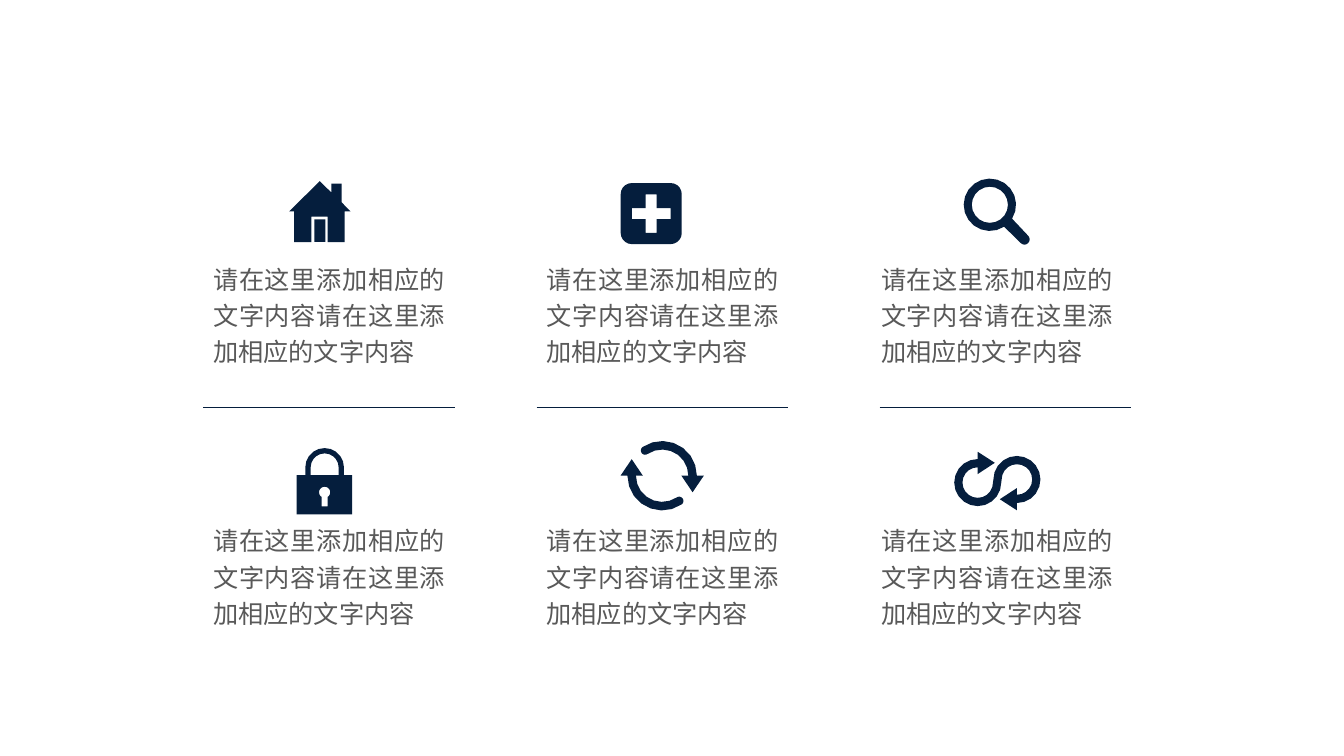
from math import cos, radians, sin

from pptx import Presentation
from pptx.dml.color import RGBColor
from pptx.enum.shapes import MSO_CONNECTOR as CONNECTOR, MSO_SHAPE as SHAPE
from pptx.enum.text import MSO_AUTO_SIZE as AUTO_SIZE, PP_ALIGN as ALIGN
from pptx.oxml.xmlchemy import OxmlElement
from pptx.util import Pt

NAVY = RGBColor(0x05, 0x1E, 0x3D)
GREY = RGBColor(0x59, 0x59, 0x59)

CAPTION = "请在这里添加相应的文字内容请在这里添加相应的文字内容"
CAPTION_LEFTS = (145.2, 383.3, 622.3)
CAPTION_TOPS = (180.7, 367.7)
DIVIDER_LEFTS = (145.2, 383.3, 628.4)
DIVIDER_TOP = 291
CAPTION_WIDTH = 180
DIVIDER_WIDTH = 179.6
CAPTION_HEIGHT = 85.7


def arc(x, y, radius, start, end):
    """Return points on an arc, with angles in degrees clockwise from the right."""
    steps = max(4, round(abs(end - start) / 18))
    angles = [radians(start + (end - start) * i / steps) for i in range(steps + 1)]
    return [(x + radius * cos(a), y + radius * sin(a)) for a in angles]


def half_turn(points):
    """Return the points turned by 180 degrees about the origin."""
    return [(-x, -y) for x, y in points]


def paint(icon):
    """Fill an icon part with navy, without outline or shadow."""
    icon.shadow.inherit = False
    icon.fill.solid()
    icon.fill.fore_color.rgb = NAVY
    icon.line.fill.background()


def add_outline(slide, left, top, *contours):
    """Draw closed contours, given relative to left and top, as one filled outline."""
    builder = None
    for contour in contours:
        start, *rest = [(Pt(x), Pt(y)) for x, y in contour]
        if builder is None:
            builder = slide.shapes.build_freeform(*start)
        else:
            builder.move_to(*start)
        builder.add_line_segments(rest, close=True)
    paint(builder.convert_to_shape(Pt(left), Pt(top)))


def add_text(slide, text, left, top, width, height, *, size, color, font="Arial",
             align=ALIGN.JUSTIFY, spacing=1.2):
    """Add a wrapped text box that grows with its text."""
    box = slide.shapes.add_textbox(Pt(left), Pt(top), Pt(width), Pt(height))
    frame = box.text_frame
    frame.word_wrap = True
    frame.auto_size = AUTO_SIZE.SHAPE_TO_FIT_TEXT
    paragraph = frame.paragraphs[0]
    paragraph.alignment = align
    paragraph.line_spacing = spacing
    run = paragraph.add_run()
    run.text = text
    run.font.name = font
    run.font.size = Pt(size)
    run.font.color.rgb = color


def add_divider(slide, left, top, width):
    """Add a thin horizontal line."""
    divider = slide.shapes.add_connector(
        CONNECTOR.STRAIGHT, Pt(left), Pt(top), Pt(left + width), Pt(top))
    divider.line.color.rgb = NAVY
    divider.line.width = Pt(0.75)
    divider._element.spPr.append(OxmlElement("a:effectLst"))


def add_house(slide, left, top):
    """Draw a house with a chimney and a door."""
    walls = [(37.4, 15.1), (37.4, 1.8), (30.2, 1.8), (30.2, 8.2), (21.8, 0),
             (0, 21.6), (3.6, 21.6), (3.6, 43.5), (15.8, 43.5), (15.8, 25.4),
             (27.4, 25.4), (27.4, 43.5), (39.6, 43.5), (39.6, 21.6), (43.8, 21.6)]
    add_outline(slide, left, top, walls)
    paint(slide.shapes.add_shape(
        SHAPE.RECTANGLE, Pt(left + 18), Pt(top + 27.4), Pt(7.9), Pt(16.1)))


def add_plus_tile(slide, left, top):
    """Draw a rounded tile with a plus cut out of it."""
    side, radius = 43.6, 7.9
    far = side - radius
    tile = [point for x, y, start in
            ((far, radius, -90), (far, far, 0), (radius, far, 90), (radius, radius, 180))
            for point in arc(x, y, radius, start, start + 90)]
    arm, inset, half = side / 2, 8, 3.9
    quarter = [(arm - inset, -half), (half, -half), (half, inset - arm)]
    turns = [quarter, [(y, -x) for x, y in quarter]]
    plus = [(arm + x, arm + y) for points in turns + [half_turn(p) for p in turns]
            for x, y in points]
    add_outline(slide, left, top, tile, plus)


def add_magnifier(slide, left, top):
    """Draw a magnifying glass."""
    rim = arc(18.7, 18.7, 18.7, 57, 392) + arc(43.4, 43.4, 3.7, -45, 135)
    lens = arc(18.7, 18.7, 12.9, 360, 0)
    add_outline(slide, left, top, rim, lens)


def add_padlock(slide, left, top):
    """Draw a padlock with a keyhole."""
    body = [(0, 47.8), (0, 19.8), (6.2, 19.8), *arc(20, 14.2, 13.8, 180, 360),
            (33.8, 19.8), (39.6, 19.8), (39.6, 47.8)]
    shackle = [(30, 19.8), *arc(20, 14.2, 10, 360, 180), (10, 19.8)]
    keyhole = [(17.9, 42), *arc(20, 32, 4, 122, 418), (22.1, 42)]
    add_outline(slide, left, top, body, shackle, keyhole)


def add_cycle(slide, x, y):
    """Draw two arrows that chase each other around a center."""
    outer, inner, end = 24.8, 18.7, 56
    middle, thickness = (outer + inner) / 2, outer - inner
    cap_x, cap_y = arc(0, 0, middle, end, end)[0]
    head = [(8 - middle, 0), (-middle, -11.8), (-8 - middle, 0)]
    rising = (arc(0, 0, inner, end, 180) + head + arc(0, 0, outer, 180, end)
              + arc(cap_x, cap_y, thickness / 2, end, end - 180))
    for arrow in (rising, half_turn(rising)):
        add_outline(slide, x, y, arrow)


def add_loop(slide, x, y):
    """Draw a sideways figure eight with two arrowheads."""
    head = [(-14, -5), (-1.8, -13), (-14, -20.9)]
    ring = arc(-14, 1.1, 10.9, 0, 270) + head + arc(-14, 1.1, 16.8, 270, 0)
    add_outline(slide, x, y, ring + half_turn(ring))


def main():
    """Build the slide and save it."""
    deck = Presentation()
    deck.slide_width, deck.slide_height = Pt(960), Pt(540)
    slide = deck.slides.add_slide(deck.slide_layouts[6])
    for top in CAPTION_TOPS:
        for left in CAPTION_LEFTS:
            add_text(slide, CAPTION, left, top, CAPTION_WIDTH, CAPTION_HEIGHT,
                     size=18, color=GREY)
    add_house(slide, 206.6, 129.4)
    add_plus_tile(slide, 443.4, 130.8)
    add_magnifier(slide, 688.4, 127.6)
    add_padlock(slide, 211.9, 319.7)
    add_cycle(slide, 473, 339.8)
    add_loop(slide, 712.4, 343.6)
    for left in DIVIDER_LEFTS:
        add_divider(slide, left, DIVIDER_TOP, DIVIDER_WIDTH)
    deck.save("out.pptx")


if __name__ == "__main__":
    main()
